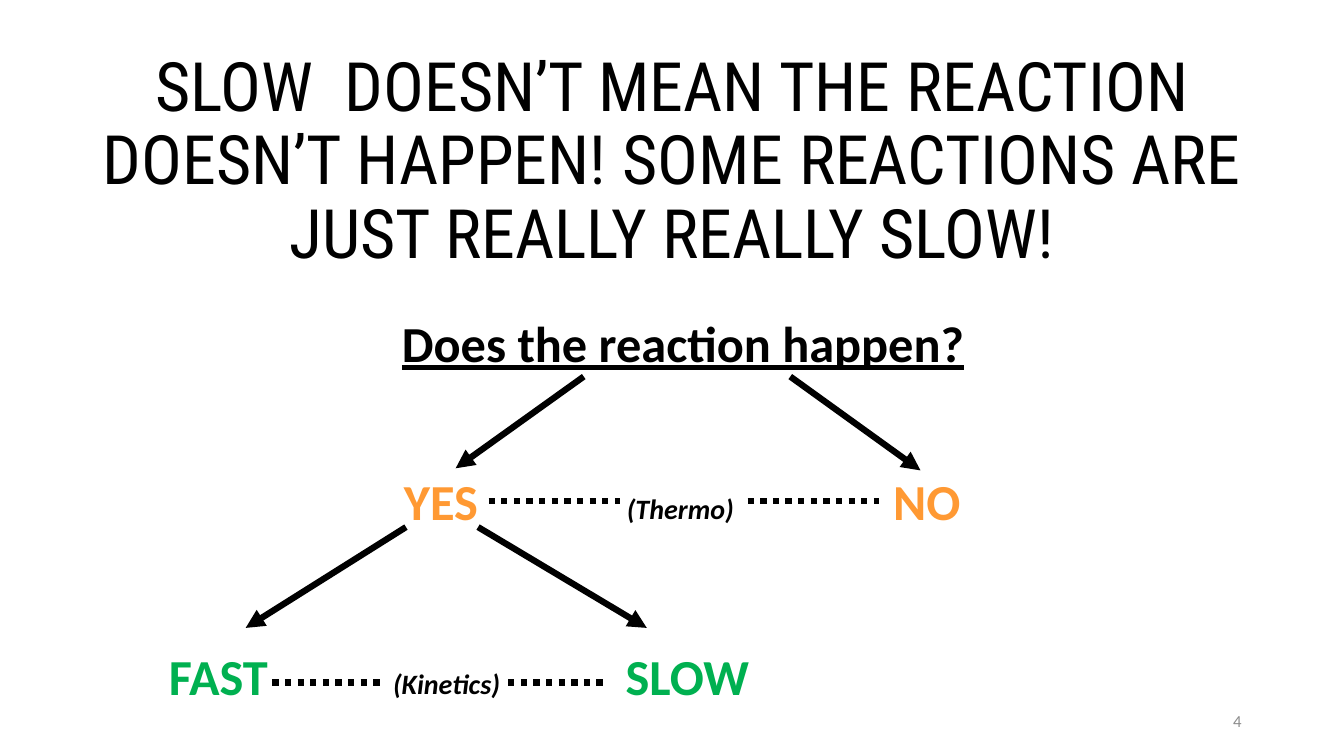
from collections import namedtuple

from lxml import etree
from pptx import Presentation
from pptx import util as u
from pptx.dml.color import RGBColor
from pptx.enum import dml, shapes, text
from pptx.oxml.ns import qn

BLACK = RGBColor(0x00, 0x00, 0x00)
ORANGE = RGBColor(0xFF, 0x99, 0x33)
GREEN = RGBColor(0x00, 0xB0, 0x50)
GREY = RGBColor(0x8C, 0x8C, 0x8C)

BODY_FONT = "Calibri"
TITLE_FONT = "Roboto Condensed"
ANSWER_SIZE = 36
TOPIC_SIZE = 20
LINE_WIDTH = 4.5

Box = namedtuple("Box", "left top width height")


def write_text(shape, content, size, color=BLACK, font=BODY_FONT, bold=False,
               italic=False, underline=False, align=text.PP_ALIGN.CENTER,
               line_spacing=1.0):
    frame = shape.text_frame
    frame.word_wrap = True
    frame.auto_size = text.MSO_AUTO_SIZE.NONE
    frame.vertical_anchor = text.MSO_ANCHOR.MIDDLE
    paragraph = frame.paragraphs[0]
    paragraph.alignment = align
    paragraph.line_spacing = line_spacing
    run = paragraph.add_run()
    run.text = content
    run.font.name = font
    run.font.size = u.Pt(size)
    run.font.color.rgb = color
    run.font.bold = bold
    run.font.italic = italic
    run.font.underline = underline


def add_text(slide, box, content, size, **text_format):
    shape = slide.shapes.add_textbox(*(u.Pt(length) for length in box))
    write_text(shape, content, size, **text_format)


def add_label(slide, center, baseline, content, size, width=150, **text_format):
    """Centre one bold line of text on center, standing on baseline."""
    height = size * 1.4
    middle = baseline - size * 0.35
    box = Box(center - width / 2, middle - height / 2, width, height)
    add_text(slide, box, content, size, bold=True, **text_format)


def add_line(slide, start, end, arrow=False):
    points = (u.Pt(length) for length in (*start, *end))
    line = slide.shapes.add_connector(shapes.MSO_CONNECTOR.STRAIGHT, *points)
    line.line.color.rgb = BLACK
    line.line.width = u.Pt(LINE_WIDTH)
    if arrow:
        outline = line.line._get_or_add_ln()
        etree.SubElement(outline, qn("a:tailEnd"), type="triangle")
    else:
        line.line.dash_style = dml.MSO_LINE.ROUND_DOT
    etree.SubElement(line._element.spPr, qn("a:effectLst"))


def add_title(slide, box, content):
    title = slide.shapes.title
    title.left, title.top, title.width, title.height = (u.Pt(length) for length in box)
    write_text(title, content, 48.6, font=TITLE_FONT, line_spacing=0.9)


def add_branch(slide, box, answers, topic, color, arrows, dots, dots_rise):
    """Draw two arrows down to a pair of answers joined by a dotted topic line.

    Answers and topic are (wording, x); arrows are (x1, x2, y2); dots are
    (x1, x2). All are relative to the box, whose bottom is the text baseline.
    """
    baseline = box.top + box.height
    for start_x, end_x, end_y in arrows:
        add_line(slide, (box.left + start_x, box.top),
                 (box.left + end_x, box.top + end_y), arrow=True)
    for start_x, end_x in dots:
        dots_y = baseline - dots_rise
        add_line(slide, (box.left + start_x, dots_y), (box.left + end_x, dots_y))
    for answer, center in answers:
        add_label(slide, box.left + center, baseline, answer, ANSWER_SIZE, color=color)
    wording, center = topic
    add_label(slide, box.left + center, baseline, wording, TOPIC_SIZE, italic=True)


def add_decision_tree(slide, box):
    add_label(slide, box.left + 368, box.top + 27, "Does the reaction happen?",
              ANSWER_SIZE, width=500, underline=True)
    add_branch(slide, Box(box.left + 169, box.top + 39, 398, 101),
               answers=(("YES", 26), ("NO", 373)), topic=("(Thermo)", 197),
               color=ORANGE, arrows=((128, 36.5, 65.5), (275.5, 368.5, 67)),
               dots=((60, 154), (245, 339)), dots_rise=12)
    add_branch(slide, Box(box.left, box.top + 146.5, 415, 118.5),
               answers=(("FAST", 36), ("SLOW", 371)), topic=("(Kinetics)", 199),
               color=GREEN, arrows=((170, 55.5, 72), (221.5, 342, 72)),
               dots=((74.5, 153.5), (243, 315)), dots_rise=7.5)


def main():
    presentation = Presentation()
    presentation.slide_width = u.Pt(960)
    presentation.slide_height = u.Pt(540)
    slide = presentation.slides.add_slide(presentation.slide_layouts.get_by_name("Title Only"))
    add_title(slide, Box(66, 64, 828, 104.5),
              "SLOW  DOESN’T MEAN THE REACTION DOESN’T HAPPEN! "
              "SOME REACTIONS ARE JUST REALLY REALLY SLOW!")
    add_decision_tree(slide, Box(120, 230, 567, 265))
    add_text(slide, Box(678, 500.5, 216, 29), "4", 12, color=GREY,
             align=text.PP_ALIGN.RIGHT)
    presentation.save("out.pptx")


if __name__ == "__main__":
    main()
